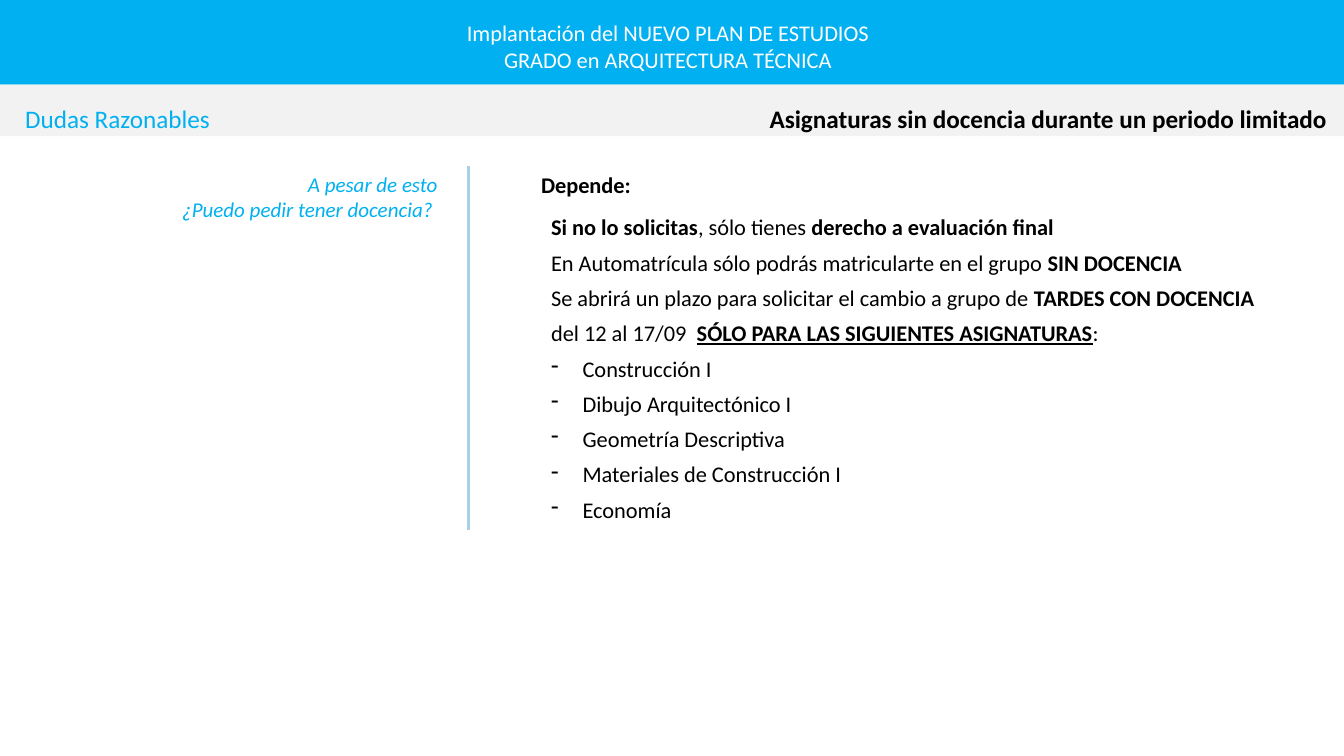
from lxml.etree import SubElement
from pptx import Presentation
from pptx.dml.color import RGBColor
from pptx.enum.shapes import MSO_CONNECTOR as Line, MSO_SHAPE as Shape
from pptx.enum.text import MSO_ANCHOR as Anchor, MSO_AUTO_SIZE as Fit, PP_ALIGN as Align
from pptx.oxml.ns import qn
from pptx.util import Pt

CYAN = RGBColor(0x00, 0xB0, 0xF0)
GREY = RGBColor(0xF2, 0xF2, 0xF2)
PALE = RGBColor(0xA4, 0xD3, 0xE6)
WHITE = RGBColor(0xFF, 0xFF, 0xFF)
BLACK = RGBColor(0, 0, 0)

# Each paragraph is a list of (text, style) runs: b bold, i italic, u underlined
HEAD = [[("Implantación del NUEVO PLAN DE ESTUDIOS ", "")],
        [("GRADO en ARQUITECTURA TÉCNICA ", "")]]
TOPIC = [[("Dudas Razonables", "")]]
TITLE = [[("Asignaturas sin docencia durante un periodo limitado", "b")]]
QUERY = [[("A pesar de esto", "i")], [("¿Puedo pedir tener docencia? ", "i")]]
REPLY = [[("Depende:", "b")]]
RULES = [
    [("Si no lo solicitas", "b"), (", sólo tienes ", ""),
     ("derecho a evaluación final", "b")],
    [("En Automatrícula sólo podrás matricularte en el grupo ", ""),
     ("SIN DOCENCIA", "b")],
    [("Se abrirá un plazo para solicitar el cambio a grupo de ", ""),
     ("TARDES CON DOCENCIA ", "b")],
    [("del 12 al 17/09  ", ""),
     ("SÓLO PARA LAS SIGUIENTES ASIGNATURAS", "bu"), (":", "")],
]
COURSES = ["Construcción I", "Dibujo Arquitectónico I", "Geometría Descriptiva",
           "Materiales de Construcción I", "Economía"]

WIDE, HIGH = 960, 540
HEAD_H, BAND_H = 60.5, 36.7
BAR_X, BODY_Y, BODY_END = 334.8, 118.8, 378.7
INDENT = 22.5

deck = Presentation()
deck.slide_width, deck.slide_height = Pt(WIDE), Pt(HIGH)
slide = deck.slides.add_slide(deck.slide_layouts[5])
shapes = slide.shapes


def band(top, height, color):
    """Draw a full-width strip."""
    strip = shapes.add_shape(Shape.RECTANGLE, 0, Pt(top), Pt(WIDE), Pt(height))
    strip.shadow.inherit = False
    strip.fill.solid()
    strip.fill.fore_color.rgb = color
    strip.line.fill.background()
    return strip


def dash(para):
    """Give a paragraph a hanging dash bullet."""
    props = para._p.get_or_add_pPr()
    props.set("marL", str(Pt(INDENT)))
    props.set("indent", str(-Pt(INDENT)))
    SubElement(props, qn("a:buChar")).set("char", "-")


def write(box, paras, size, color, align, side=7.2, after=0, plain=99):
    """Fill a box; paragraphs from index plain onwards get a dash."""
    frame = box.text_frame
    frame.word_wrap = True
    frame.auto_size = Fit.NONE
    frame.vertical_anchor = Anchor.TOP
    frame.margin_left = frame.margin_right = Pt(side)
    frame.margin_top = frame.margin_bottom = Pt(3.6)
    for n, runs in enumerate(paras):
        para = frame.add_paragraph() if n else frame.paragraphs[0]
        para.alignment = align
        para.space_before, para.space_after = Pt(0), Pt(after)
        if n >= plain:
            dash(para)
        for text, style in runs:
            run = para.add_run()
            run.text = text
            font = run.font
            font.name, font.size = "Calibri", Pt(size)
            font.color.rgb = color
            font.bold, font.italic = "b" in style, "i" in style
            font.underline = "u" in style


def label(left, top, width, height, *args, **kinds):
    box = shapes.add_textbox(Pt(left), Pt(top), Pt(width), Pt(height))
    write(box, *args, **kinds)


band(0, HEAD_H, CYAN)
strip = band(HEAD_H, BAND_H, GREY)

title = shapes.title
title.left, title.top, title.width, title.height = Pt(471.6), Pt(70), Pt(480), Pt(29)
write(title, TITLE, 18, BLACK, Align.RIGHT, side=3.6)
strip.element.addnext(title.element)  # keeps the title in front of the strip

label(14.4, 70, 189.4, 29, TOPIC, 18, CYAN, Align.LEFT, side=3.6)
label(170, 10.1, 617.8, 46, HEAD, 16, WHITE, Align.CENTER, side=3.6)
label(34.6, BODY_Y, 285.1, 44, QUERY, 15, CYAN, Align.RIGHT)

bar = shapes.add_connector(Line.STRAIGHT, Pt(BAR_X), Pt(BODY_END), Pt(BAR_X), Pt(BODY_Y))
bar.line.color.rgb = PALE
bar.line.width = Pt(2.25)
SubElement(bar.element.spPr, qn("a:effectLst"))

label(379.4, BODY_Y, 552.2, 26.6, REPLY, 16, BLACK, Align.JUSTIFY, after=6)
label(386.6, 149, 552.2, 230.4, RULES + [[(name, "")] for name in COURSES],
      16, BLACK, Align.JUSTIFY, after=6, plain=len(RULES))

deck.save("out.pptx")
